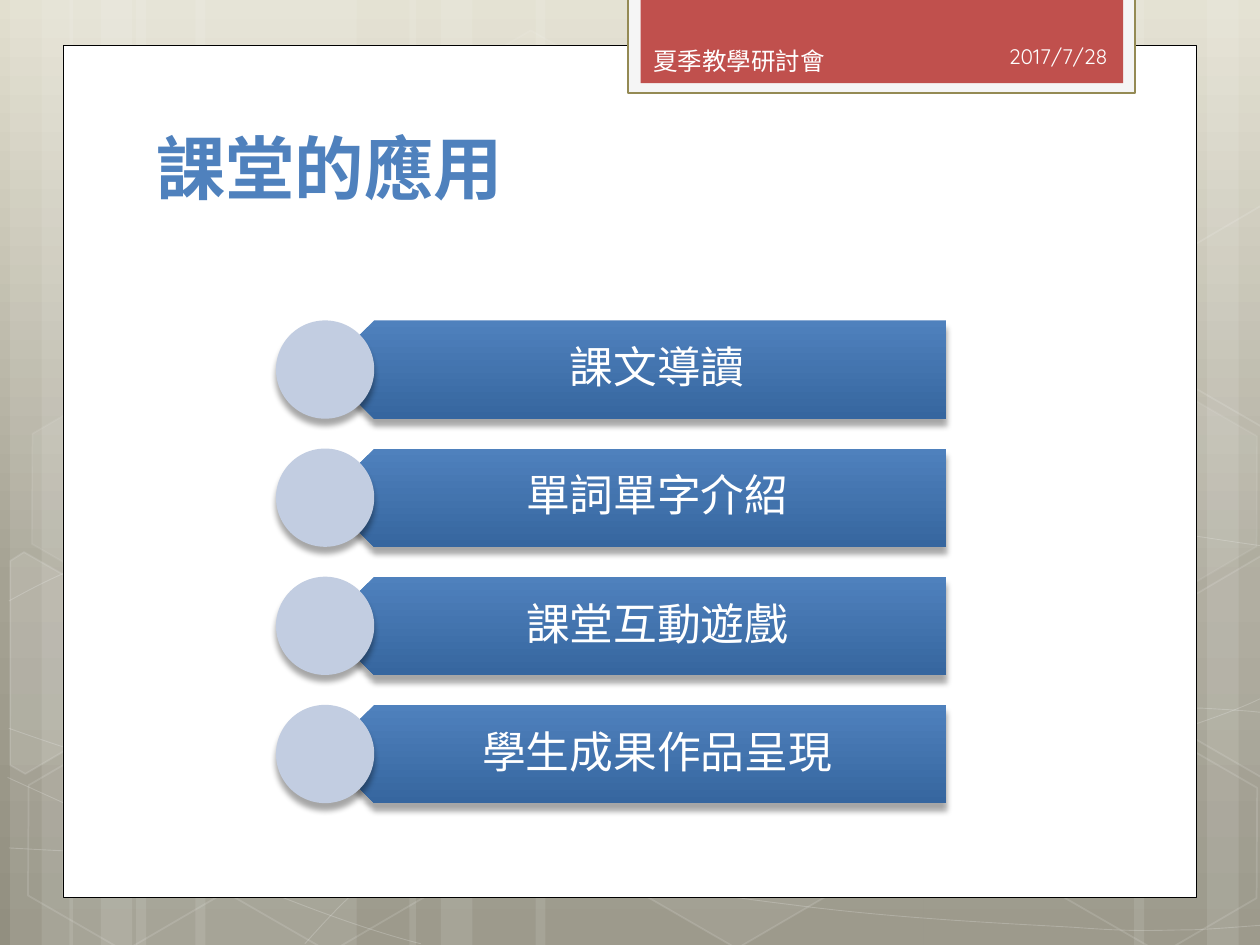
from math import cos, radians, sin

from lxml.etree import SubElement
from pptx import Presentation
from pptx.dml.color import RGBColor
from pptx.enum.shapes import MSO_SHAPE
from pptx.enum.text import MSO_ANCHOR, PP_ALIGN
from pptx.oxml.ns import qn
from pptx.util import Inches, Pt

COLUMNS, ROWS = 100, 75
CELL = Inches(0.1)
FONT = "Quicksand"
TILT = 30
COLORS = {
    "white": "FFFFFF",
    "black": "000000",
    "red": "C0504D",
    "olive": "948A54",
    "mat": "F5F5F5",
    "date": "FEFEFE",
    "title": "4F81BD",
    "circle": "C2CDE1",
}
BACKDROP = [(0, "E2DFCF"), (62, "A5A293"), (100, "928F80")]
BAR_GRADIENT = [(0, "4F81BD"), (100, "36669F")]
TOPICS = ["課文導讀", "單詞單字介紹", "課堂互動遊戲", "學生成果作品呈現"]
STRIPES = [
    (10.8, 17.5, 0), (0.8, 5, 0), (3.3, 8.3, 0), (15.5, 17.5, 0), (5.5, 5, 0),
    (8, 8.3, 0), (73.3, 17.5, 180), (95.8, 5, 180), (90, 8.3, 180),
    (42.5, 30.8, 0), (32.5, 5, 0), (35, 8.3, 0),
]
CURVES = [
    [(0.7, 67.3), (6.1, 67.6), (11.5, 67.9), (19, 67.8), (26.5, 67.7), (35.8, 67.5),
     (45.8, 66.5), (55.8, 65.5), (70, 63.6), (79.2, 61.7), (88.3, 59.8),
     (97.7, 56.8), (100.7, 55.1)],
    [(0.7, 47.7), (3.6, 46.1), (6.5, 44.6), (12.1, 43.1), (17.8, 41.6), (25.9, 39.4),
     (34.7, 38.7), (43.6, 38), (54.4, 37.9), (65.4, 38.7), (76.4, 39.5),
     (94.7, 42.6), (100.7, 43.4)],
    [(0.6, 61.7), (12.7, 67.2), (24.7, 72.7), (33.4, 74.9)],
    [(0.7, 57.8), (3.8, 58.9), (7, 60), (12.8, 61.6), (18.6, 63.1), (27.3, 65.6),
     (35.7, 67.3), (44, 69), (54.5, 70.8), (62.8, 71.8), (71.1, 72.9), (80, 73.3),
     (85.3, 73.6), (90.5, 74), (91.9, 73.8), (94.5, 73.8), (97.1, 73.7),
     (98.9, 73.5), (100.7, 73.4)],
    [(24.2, 74.9), (26, 72.9), (27.8, 70.9), (30.2, 69.1), (32.6, 67.3), (36, 65.3),
     (38.8, 63.9), (41.6, 62.5), (43.3, 61.9), (47, 60.9), (50.6, 59.9),
     (57.3, 58.5), (60.8, 57.8), (64.4, 57.1), (64.9, 57.1), (68, 56.9),
     (71.1, 56.6), (76, 56.3), (79.4, 56.2), (82.9, 56.1), (88.6, 56.2),
     (88.6, 56.2), (90.8, 56.2), (93, 56.2), (95.3, 56.2), (97.1, 56.3),
     (98.8, 56.4), (99.7, 56.5), (100.6, 56.6), (100.3, 56.5), (100.6, 56.6)],
]
HEXAGONS = [
    (33.4, 3.6, 4, 8), (49.7, 58.9, 6, 12), (1.1, 59.1, 0, 12),
    (1.4, 31.2, 7, 8), (17.4, 59.2, 0, 12), (75.3, 45.3, 10, 12),
    (83.4, 59.3, 0, 12), (83.4, 31.4, 7, 8),
]
CUT_HEXAGONS = [
    ((3.6, 53.5), 10, [(0.8, 44.5), (1.9, 43.8), (9.6, 48.2), (9.5, 57),
                       (2, 61.4), (0.8, 60.7)]),
    ((98.5, 52), 4, [(92.6, 48.5), (100.1, 44.1), (100.9, 44.6), (100.9, 61.3),
                     (100.2, 61.7), (92.6, 57.3)]),
    ((98.5, 24.1), 0, [(92.6, 20.7), (100.1, 16.3), (101, 16.8), (100.9, 33.5),
                       (100.2, 33.9), (92.6, 29.5)]),
]


def grid(*cells):
    return [round(cell * CELL) for cell in cells]


def paint(fill, color, alpha=100):
    if not alpha:
        fill.background()
        return
    fill.solid()
    fill.fore_color.rgb = RGBColor.from_string(COLORS[color])
    if alpha < 100:
        value = fill._xPr.find(".//" + qn("a:srgbClr"))
        SubElement(value, qn("a:alpha"), val=str(alpha * 1000))


def paint_gradient(fill, element, stops):
    fill.gradient()
    fill.gradient_angle = 270
    element.find(".//" + qn("a:gradFill")).set("rotWithShape", "0")
    stop_list = element.find(".//" + qn("a:gsLst"))
    for old_stop in list(stop_list):
        stop_list.remove(old_stop)
    for position, color in stops:
        stop = SubElement(stop_list, qn("a:gs"), pos=str(position * 1000))
        SubElement(stop, qn("a:srgbClr"), val=color)


def outline(shape, color=None, width=0, alpha=100):
    if color is None:
        shape.line.fill.background()
        return
    paint(shape.line.fill, color, alpha)
    shape.line.width = Pt(width)


def add_preset(slide, kind, box, color=None, alpha=100):
    shape = slide.shapes.add_shape(kind, *grid(*box))
    shape.shadow.inherit = False
    outline(shape)
    if color:
        paint(shape.fill, color, alpha)
    return shape


def add_freeform(slide, points, close, alpha):
    points = [grid(*point) for point in points]
    builder = slide.shapes.build_freeform(*points[0])
    builder.add_line_segments(points[1:], close=close)
    shape = builder.convert_to_shape()
    shape.shadow.inherit = False
    paint(shape.fill, "white", alpha)
    return shape


def add_curve(slide, points):
    curve = add_freeform(slide, points, False, 0)
    outline(curve, "white", 0.5, 20)
    segments = list(curve._element.iter(qn("a:lnTo")))
    for start in range(0, len(segments), 3):
        bezier = SubElement(segments[start].getparent(), qn("a:cubicBezTo"))
        for segment in segments[start:start + 3]:
            bezier.append(segment[0])
            segment.getparent().remove(segment)


def turn_back(point, pivot):
    x, y = point[0] - pivot[0], point[1] - pivot[1]
    cosine, sine = cos(radians(TILT)), sin(radians(TILT))
    return pivot[0] + x * cosine + y * sine, pivot[1] - x * sine + y * cosine


def add_shadow(shape):
    effects = shape._element.spPr.find(qn("a:effectLst"))
    shadow = SubElement(effects, qn("a:outerShdw"), blurRad=str(Pt(3.5)),
                        dist=str(Pt(4)), dir="5400000", rotWithShape="0")
    color = SubElement(shadow, qn("a:srgbClr"), val=COLORS["black"])
    SubElement(color, qn("a:alpha"), val="34000")


def write(frame, text, size, color, align=PP_ALIGN.LEFT, bold=False):
    frame.text = text
    paragraph = frame.paragraphs[0]
    paragraph.alignment = align
    paragraph.font.name = FONT
    paragraph.font.size = Pt(size)
    paragraph.font.bold = bold
    paragraph.font.color.rgb = RGBColor.from_string(COLORS[color])
    return paragraph


def add_text(slide, box, text, size, color, align=PP_ALIGN.LEFT, wrap=True):
    frame = slide.shapes.add_textbox(*grid(*box)).text_frame
    frame.word_wrap = wrap
    frame.vertical_anchor = MSO_ANCHOR.MIDDLE
    return frame, write(frame, text, size, color, align)


def add_backdrop(slide):
    paint_gradient(slide.background.fill, slide.element, BACKDROP)
    for left, width, rotation in STRIPES:
        stripe = add_preset(slide, MSO_SHAPE.RECTANGLE, (left, 0, width, ROWS), "white", 10)
        stripe.rotation = rotation
    for points in CURVES:
        add_curve(slide, points)
    for left, top, fill_alpha, line_alpha in HEXAGONS:
        hexagon = add_preset(slide, MSO_SHAPE.HEXAGON, (left, top, 17.5, 15.2),
                             "white", fill_alpha)
        hexagon.adjustments[0] = 0.285
        hexagon.rotation = TILT
        outline(hexagon, "white", 1, line_alpha)
    for pivot, alpha, points in CUT_HEXAGONS:
        upright = [turn_back(point, pivot) for point in points]
        hexagon = add_freeform(slide, upright, True, alpha)
        hexagon.rotation = TILT
        outline(hexagon, "white", 1, 12)


def add_panel(slide):
    panel = add_preset(slide, MSO_SHAPE.RECTANGLE, (5, 3.6, COLUMNS - 10, 67.65), "white")
    outline(panel, "black", 0.5)
    mat = add_preset(slide, MSO_SHAPE.RECTANGLE, (49.85, -0.2, 40.25, 7.6), "mat")
    outline(mat, "olive", 1.25)
    add_preset(slide, MSO_SHAPE.RECTANGLE, (50.85, -0.2, 38.3, 6.8), "red")
    add_text(slide, (50.85, 3.1, 15.8, 3.4), "夏季教學研討會", 14, "white", wrap=False)


def place_title(slide, text):
    title = slide.shapes.title
    title.left, title.top, title.width, title.height = grid(11.4, 11.2, 76.8, 12.5)
    frame = title.text_frame
    frame.vertical_anchor = MSO_ANCHOR.BOTTOM
    paragraph = write(frame, text, 39.6, "title", bold=True)
    paragraph.line_spacing = 0.9
    title._element.getparent().append(title._element)


def add_topic(slide, top, text):
    height = 7.8
    bar = add_preset(slide, MSO_SHAPE.PENTAGON, (25.8, top, 49.3, height))
    bar.rotation = 180
    paint_gradient(bar.fill, bar._element, BAR_GRADIENT)
    add_shadow(bar)
    frame, paragraph = add_text(slide, (27.7, top, 47.3, height), text, 25, "white",
                                PP_ALIGN.CENTER)
    frame.margin_left, frame.margin_top, frame.margin_right, frame.margin_bottom = grid(
        3.5, 1, 1.9, 1)
    paragraph.line_spacing = 0.9
    add_shadow(add_preset(slide, MSO_SHAPE.OVAL, (21.9, top, height, height), "circle"))


def main():
    presentation = Presentation()
    presentation.slide_width, presentation.slide_height = grid(COLUMNS, ROWS)
    slide = presentation.slides.add_slide(presentation.slide_layouts[5])
    add_backdrop(slide)
    add_panel(slide)
    place_title(slide, "課堂的應用\v")
    for row, topic in enumerate(TOPICS):
        add_topic(slide, 25.43 + 10.17 * row, topic)
    add_text(slide, (65.6, 2.45, 23.3, 4), "2017/7/28", 12, "date", PP_ALIGN.RIGHT)
    presentation.save("out.pptx")


if __name__ == "__main__":
    main()
